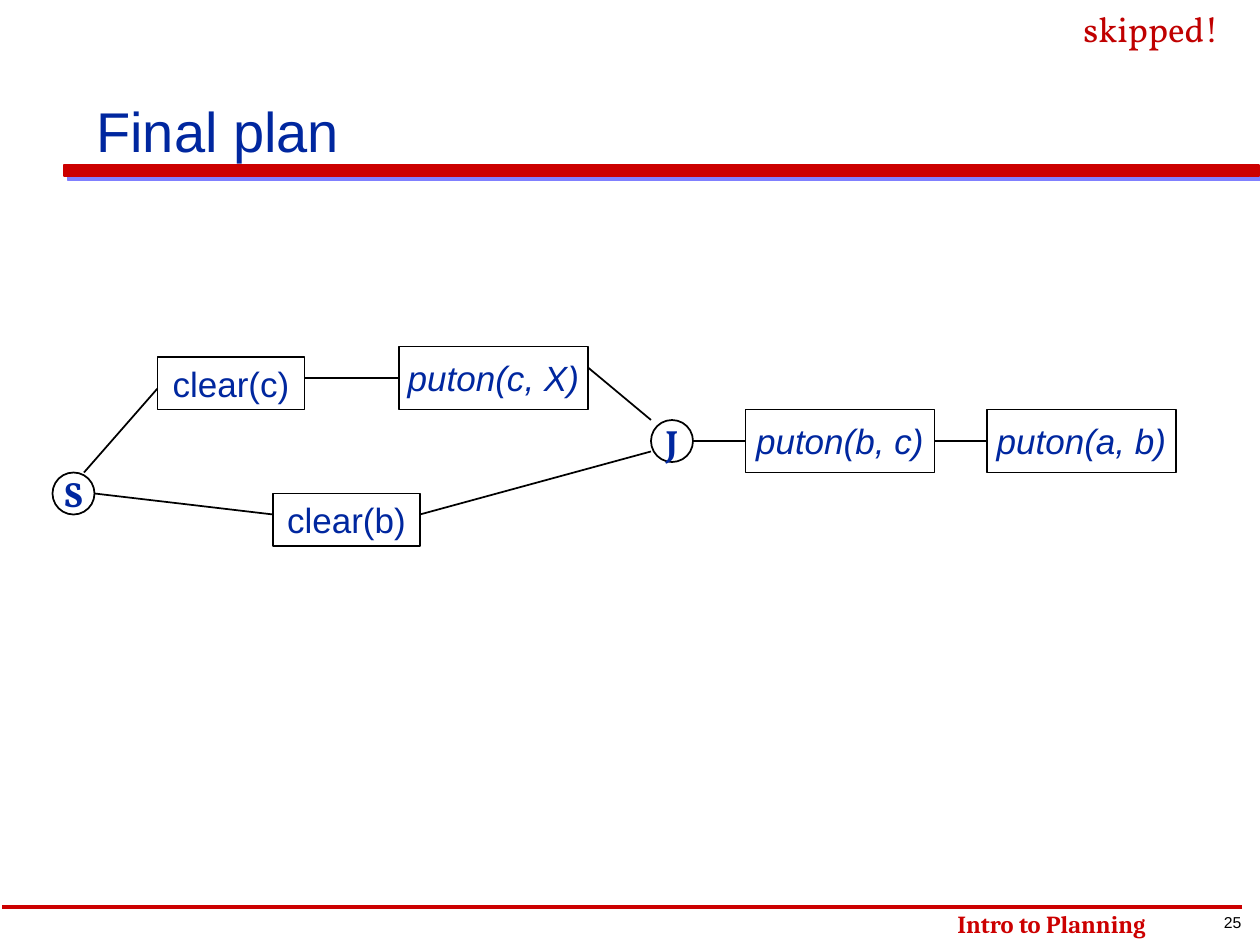
import pptx
import pptx.util
import pptx.dml.color
import pptx.enum.shapes
import pptx.enum.text
import lxml.etree

RGB = pptx.dml.color.RGBColor
RED = RGB(0xCC, 0x00, 0x00)
DARK = RGB(0xC0, 0x00, 0x00)
BLUE = RGB(0x00, 0x27, 0x9F)
BLACK = RGB(0x00, 0x00, 0x00)
KIND = pptx.enum.shapes.MSO_SHAPE
ALIGN = pptx.enum.text.PP_ALIGN
ANCHOR = pptx.enum.text.MSO_ANCHOR
FIT = pptx.enum.text.MSO_AUTO_SIZE
Pt = pptx.util.Pt
UNIT = pptx.util.Inches(1) // 12  # grid of 120 columns and 90 rows
NS = "http://schemas.openxmlformats.org/drawingml/2006/main"

deck = pptx.Presentation()
deck.slide_width, deck.slide_height = 120 * UNIT, 90 * UNIT
slide = deck.slides.add_slide(deck.slide_layouts[6])


def write(shape, text, frame, font, color, align=ALIGN.LEFT):
    body = shape.text_frame
    body.text = text
    for key, val in frame.items():
        setattr(body, key, val)
    para = body.paragraphs[0]
    para.alignment = align
    face = para.runs[0].font
    for key, val in font.items():
        setattr(face, key, val)
    face.color.rgb = color


def link(ends, color, width):
    line = slide.shapes.add_connector(
        pptx.enum.shapes.MSO_CONNECTOR.STRAIGHT, *[round(n * UNIT) for n in ends])
    line.line.color.rgb = color
    line.line.width = Pt(width)
    lxml.etree.SubElement(line._element.spPr, f"{{{NS}}}effectLst")
    return line


# Red title bar with its offset shadow
bar = slide.shapes.add_shape(
    KIND.RECTANGLE, *[round(n * UNIT) for n in (6.1, 15.7, 113.8, 1.1)])
bar.fill.solid()
bar.fill.fore_color.rgb = RED
bar.line.color.rgb = RED
bar.line.width = Pt(1)
bar._element.spPr.append(lxml.etree.fromstring(
    f'<a:effectLst xmlns:a="{NS}"><a:outerShdw dist="{Pt(2.8)}" dir="2700000" '
    'algn="ctr" rotWithShape="0"><a:srgbClr val="8080FF"/></a:outerShdw></a:effectLst>'))

# Footer rule
link((118.3, 86.4, 0.2, 86.4), RED, 2)

# Page number, footer, title and remark
grow = {"auto_size": FIT.SHAPE_TO_FIT_TEXT}
for text, spot, frame, font, color, align in [
    ("25", (115.3, 86.3, 4.2, 3), {"word_wrap": False, **grow},
     {"size": Pt(9), "name": "Arial"}, BLACK, ALIGN.CENTER),
    ("Intro to Planning", (90, 86, 28, 4), {"word_wrap": True, **grow},
     {"size": Pt(14), "name": "Cambria", "bold": True}, RED, ALIGN.LEFT),
    ("Final plan", (8, 1.1, 101.8, 15.1),
     {"word_wrap": True, "vertical_anchor": ANCHOR.BOTTOM},
     {"size": Pt(32), "name": "Arial"}, BLUE, ALIGN.LEFT),
    ("skipped!", (102, 0.1, 15.4, 5.3), {"word_wrap": False, **grow},
     {"size": Pt(20), "name": "Vollkorn"}, DARK, ALIGN.LEFT),
]:
    box = slide.shapes.add_textbox(*[round(n * UNIT) for n in spot])
    write(box, text, frame, font, color, align)

# Plan steps: each style has a shape, a size in grid units and a font
STYLES = {
    "put": (KIND.RECTANGLE, 18, 6, {"name": "Arial", "italic": True}),
    "clear": (KIND.RECTANGLE, 14, 5, {"name": "Arial"}),
    "node": (KIND.OVAL, 4, 4, {"name": "Vollkorn", "bold": True}),
}
steps = {}
for text, style, col, row in [
    ("puton(a, b)", "put", 94, 39),
    ("puton(b, c)", "put", 71, 39),
    ("S", "node", 5, 45),
    ("clear(b)", "clear", 26, 47),
    ("J", "node", 62, 40),
    ("puton(c, X)", "put", 38, 33),
    ("clear(c)", "clear", 15, 34),
]:
    kind, wide, high, font = STYLES[style]
    step = slide.shapes.add_shape(
        kind, col * UNIT, row * UNIT, wide * UNIT, high * UNIT)
    step.shadow.inherit = False
    step.fill.background()
    step.line.color.rgb = BLACK
    step.line.width = Pt(1)
    write(step, text, {"word_wrap": False, "vertical_anchor": ANCHOR.MIDDLE},
          {"size": Pt(20), **font}, BLUE, ALIGN.CENTER)
    steps[text] = step

# Order of the steps; joined where a line meets the middle of a side
for ends, start, stop in [
    ((9, 47, 26, 49), None, None),
    ((89, 42, 94, 42), "puton(b, c)", "puton(a, b)"),
    ((66, 42, 71, 42), None, "puton(b, c)"),
    ((29, 36, 38, 36), None, "puton(c, X)"),
    ((8, 45, 15, 37), None, None),
    ((56, 35, 62, 40), None, None),
    ((40, 49, 62, 43), None, None),
]:
    line = link(ends, BLACK, 1)
    if start:
        line.begin_connect(steps[start], 3)
    if stop:
        line.end_connect(steps[stop], 1)

deck.save("out.pptx")
